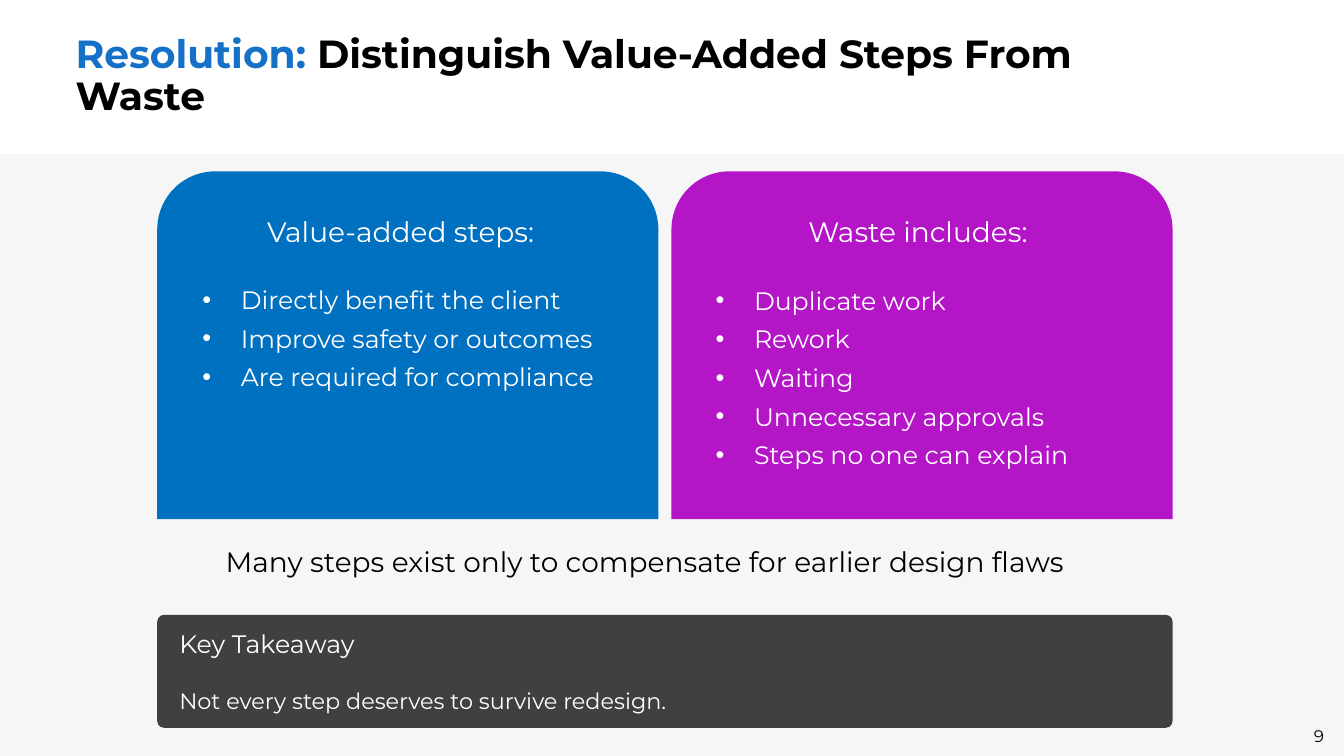
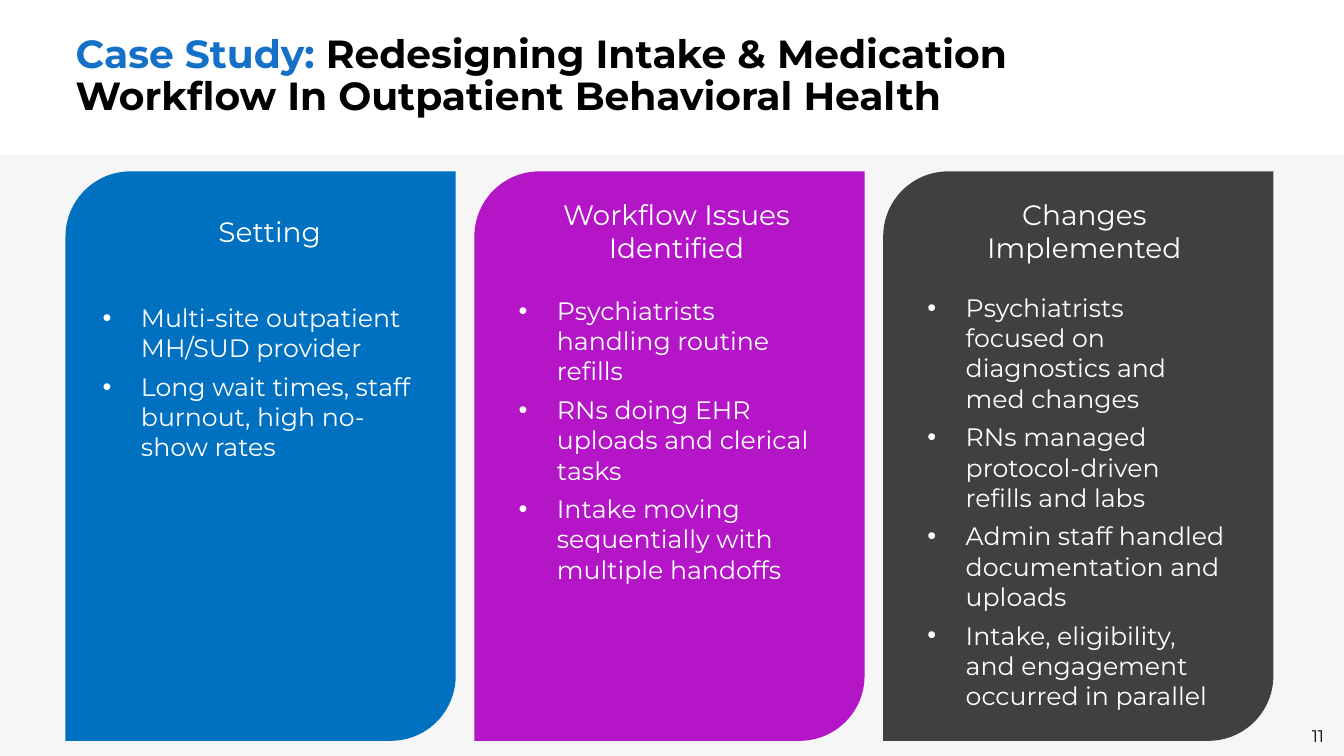
"""Builds two workflow redesign slides with coloured cards of bullet points."""
import pptx
import pptx.util
import pptx.dml.color
import pptx.enum.shapes
import pptx.enum.text
import pptx.oxml

FONT = "Montserrat"
BLACK, WHITE, ACCENT, BACKDROP = "000000", "FFFFFF", "1570C7", "F6F6F6"
BLUE, PURPLE, CHARCOAL = "0070C0", "B315C7", "404040"
SHAPE = pptx.enum.shapes.MSO_SHAPE
ALIGN = pptx.enum.text.PP_ALIGN
MIDDLE = pptx.enum.text.MSO_ANCHOR.MIDDLE
NAMESPACE = "http://schemas.openxmlformats.org/drawingml/2006/main"
BULLET_XML = (
    f'<a:buClr xmlns:a="{NAMESPACE}"><a:srgbClr val="{WHITE}"/></a:buClr>',
    f'<a:buFont xmlns:a="{NAMESPACE}" typeface="Arial"/>',
    f'<a:buChar xmlns:a="{NAMESPACE}" char="•"/>',
)

SLIDE_WIDTH, SLIDE_HEIGHT = 13.33, 7.5
BAND_TOP, CARD_TOP = 1.53, 1.7
HEADING_MIDDLE, HEADING_WIDTH, HEADING_HEIGHT = 2.29, 3.2, 0.8
BULLET_INDENT = pptx.util.Inches(0.38)


def place(slide, kind, left, top, width, height, colour=None):
    """Add a filled preset shape, or a text box when kind is None."""
    box = [pptx.util.Inches(length) for length in (left, top, width, height)]
    if kind is None:
        item = slide.shapes.add_textbox(*box)
    else:
        item = slide.shapes.add_shape(kind, *box)
        item.shadow.inherit = False
        item.fill.solid()
        item.fill.fore_color.rgb = pptx.dml.color.RGBColor.from_string(colour)
        item.line.fill.background()
    item.text_frame.word_wrap = True
    return item


def write(paragraph, text, size, colour, align=ALIGN.LEFT, bold=False):
    """Append one formatted run and align its paragraph."""
    paragraph.alignment = align
    run = paragraph.add_run()
    run.text = text
    run.font.name = FONT
    run.font.size = pptx.util.Pt(size)
    run.font.bold = bold
    run.font.color.rgb = pptx.dml.color.RGBColor.from_string(colour)


pages = [
    {
        "number": "9",
        "topic": "Resolution: ",
        "title": "Distinguish Value-Added Steps From Waste",
        "outline": SHAPE.ROUND_2_SAME_RECTANGLE,
        "left": 1.56, "span": 10.07, "card_width": 4.97, "card_height": 3.45,
        "cards": [
            ("Value-added steps:", BLUE, -0.07, 0.35, 2.77, [
                "Directly benefit the client",
                "Improve safety or outcomes",
                "Are required for compliance",
            ]),
            ("Waste includes:", PURPLE, -0.04, 0.34, 2.78, [
                "Duplicate work",
                "Rework",
                "Waiting",
                "Unnecessary approvals",
                "Steps no one can explain",
            ]),
        ],
        "remark": "Many steps exist only to compensate for earlier design flaws",
        "takeaway": "Not every step deserves to survive redesign.",
    },
    {
        "number": "11",
        "topic": "Case Study: ",
        "title": "Redesigning Intake & Medication Workflow In Outpatient Behavioral Health",
        "outline": SHAPE.ROUND_2_DIAG_RECTANGLE,
        "left": 0.65, "span": 11.98, "card_width": 3.87, "card_height": 5.65,
        "cards": [
            ("Setting", BLUE, 0.09, 0.27, 2.95, [
                "Multi-site outpatient MH/SUD provider",
                "Long wait times, staff burnout, high no-show rates",
            ]),
            ("Workflow Issues Identified", PURPLE, 0.07, 0.34, 2.88, [
                "Psychiatrists handling routine refills",
                "RNs doing EHR uploads and clerical tasks",
                "Intake moving sequentially with multiple handoffs",
            ]),
            ("Changes Implemented", CHARCOAL, 0.06, 0.34, 2.85, [
                "Psychiatrists focused on diagnostics and med changes",
                "RNs managed protocol-driven refills and labs",
                "Admin staff handled documentation and uploads",
                "Intake, eligibility, and engagement occurred in parallel",
            ]),
        ],
    },
]

deck = pptx.Presentation()
deck.slide_width = pptx.util.Inches(SLIDE_WIDTH)
deck.slide_height = pptx.util.Inches(SLIDE_HEIGHT)
title_only = deck.slide_layouts[5]

for page in pages:
    slide = deck.slides.add_slide(title_only)
    place(slide, SHAPE.RECTANGLE, 0, BAND_TOP, SLIDE_WIDTH, SLIDE_HEIGHT - BAND_TOP, BACKDROP)

    title = slide.shapes.title
    title.left, title.top = pptx.util.Inches(0.65), pptx.util.Inches(0.02)
    title.width, title.height = pptx.util.Inches(10.18), pptx.util.Inches(1.48)
    title.text_frame.vertical_anchor = MIDDLE
    headline = title.text_frame.paragraphs[0]
    headline.line_spacing = 0.9
    write(headline, page["topic"], 28, ACCENT, bold=True)
    write(headline, page["title"], 28, BLACK, bold=True)

    page_number = place(slide, None, 12.73, 7.15, 0.5, 0.3)
    write(page_number.text_frame.paragraphs[0], page["number"], 12, BLACK, ALIGN.RIGHT)

    card_width, cards = page["card_width"], page["cards"]
    pitch = (page["span"] - card_width) / (len(cards) - 1)
    for column, (heading, colour, shift, inset, body_top, points) in enumerate(cards):
        left = page["left"] + column * pitch
        place(slide, page["outline"], left, CARD_TOP, card_width, page["card_height"], colour)

        heading_left = left + (card_width - HEADING_WIDTH) / 2 + shift
        heading_top = HEADING_MIDDLE - HEADING_HEIGHT / 2
        label = place(slide, None, heading_left, heading_top, HEADING_WIDTH, HEADING_HEIGHT)
        label.text_frame.vertical_anchor = MIDDLE
        write(label.text_frame.paragraphs[0], heading, 20, WHITE, ALIGN.CENTER)

        body_height = CARD_TOP + page["card_height"] - body_top
        body = place(slide, None, left + inset, body_top, card_width - 2 * inset, body_height)
        for row, point in enumerate(points):
            paragraph = body.text_frame.add_paragraph() if row else body.text_frame.paragraphs[0]
            properties = paragraph._p.get_or_add_pPr()
            properties.set("marL", str(BULLET_INDENT))
            properties.set("indent", str(-BULLET_INDENT))
            for xml in BULLET_XML:
                properties.append(pptx.oxml.parse_xml(xml))
            if row:
                paragraph.space_before = pptx.util.Pt(6)
            write(paragraph, point, 18, WHITE)

    if "takeaway" in page:
        remark = place(slide, None, 1.47, 5.35, 9.85, 0.44)
        write(remark.text_frame.paragraphs[0], page["remark"], 20, BLACK, ALIGN.CENTER)

        takeaway = place(slide, SHAPE.ROUNDED_RECTANGLE, page["left"], 6.1, page["span"], 1.12, CHARCOAL)
        takeaway.adjustments[0] = 0.06
        takeaway.text_frame.margin_left = pptx.util.Inches(0.2)
        takeaway.text_frame.vertical_anchor = MIDDLE
        write(takeaway.text_frame.paragraphs[0], "Key Takeaway", 18, WHITE)
        lesson = takeaway.text_frame.add_paragraph()
        lesson.space_before = pptx.util.Pt(20)
        write(lesson, page["takeaway"], 16, WHITE)

deck.save("out.pptx")
